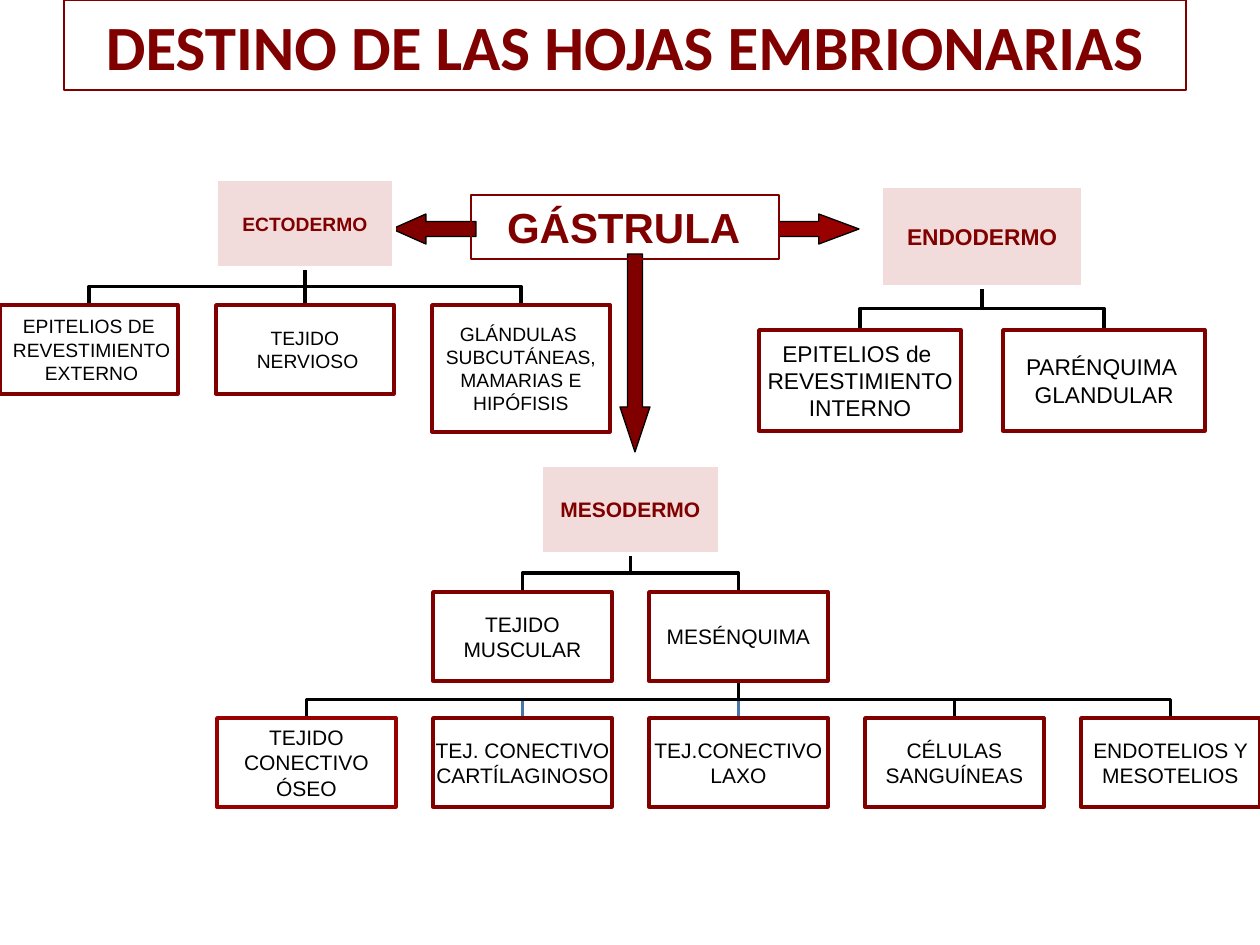
import pptx
import pptx.util
import pptx.oxml.ns
import lxml.etree
from pptx.dml.color import RGBColor
from pptx.enum.shapes import MSO_CONNECTOR, MSO_SHAPE
from pptx.enum.text import MSO_ANCHOR, PP_ALIGN

PX = 914400 / 126
MAROON = RGBColor(0x80, 0x00, 0x00)
RED = RGBColor(0x99, 0x00, 0x00)
PINK = RGBColor(0xF2, 0xDC, 0xDB)
BLUE = RGBColor(0x48, 0x75, 0xAC)
BLACK = RGBColor(0x00, 0x00, 0x00)
WHITE = RGBColor(0xFF, 0xFF, 0xFF)


def px(*values):
    return [pptx.util.Emu(round(v * PX)) for v in values]


def style(sp, fill, line, width):
    sp.shadow.inherit = False
    if fill is None:
        sp.fill.background()
    else:
        sp.fill.solid()
        sp.fill.fore_color.rgb = fill
    sp.line.color.rgb = line
    sp.line.width = pptx.util.Pt(width)


def write(tf, lines, size, color, bold=False, font="Arial", align=PP_ALIGN.CENTER):
    tf.word_wrap = True
    for i, line in enumerate(lines):
        p = tf.add_paragraph() if i else tf.paragraphs[0]
        p.alignment = align
        r = p.add_run()
        r.text = line
        r.font.name = font
        r.font.size = pptx.util.Pt(size)
        r.font.bold = bold
        r.font.color.rgb = color


def add_node(s, box, lines, size, root=False, line=MAROON):
    sp = s.shapes.add_shape(MSO_SHAPE.RECTANGLE, *px(*box))
    style(sp, PINK if root else WHITE, WHITE if root else line, 2)
    tf = sp.text_frame
    tf.margin_left = tf.margin_top = tf.margin_right = tf.margin_bottom = px(1)[0]
    tf.vertical_anchor = MSO_ANCHOR.MIDDLE
    write(tf, lines, size, MAROON if root else BLACK, root)
    return sp


def add_link(s, parent, child, color=BLACK):
    x1, x2 = (n.left + n.width // 2 for n in (parent, child))
    y1, y2 = parent.top + parent.height, child.top
    if abs(x1 - x2) < PX:
        sp = s.shapes.add_connector(MSO_CONNECTOR.STRAIGHT, x1, y1, x2, y2)
        sp.begin_connect(parent, 2)
        sp.end_connect(child, 0)
    else:
        mid = (y1 + y2) // 2
        fb = s.shapes.build_freeform(x1, y1)
        fb.add_line_segments([(x1, mid), (x2, mid), (x2, y2)], close=False)
        sp = fb.convert_to_shape()
        sp.fill.background()
    sp.line.color.rgb = color
    sp.line.width = pptx.util.Pt(2)
    if sp._element.spPr.find(pptx.oxml.ns.qn("a:effectLst")) is None:
        lxml.etree.SubElement(sp._element.spPr, pptx.oxml.ns.qn("a:effectLst"))
    s.shapes._spTree.insert(2, sp._element)


def add_row(s, box, pitch, labels, size):
    x, y, w, h = box
    return [add_node(s, (x + i * pitch, y, w, h), lines, size)
            for i, lines in enumerate(labels)]


def add_branch(s, box, node, pitch, root, labels, size):
    x, y, width = box
    w, h, step = node
    parent = add_node(s, (x + (width - w) / 2, y, w, h), [root], size, root=True)
    children = add_row(s, (x, y + step, w, h), pitch, labels, size)
    for child in children:
        add_link(s, parent, child)
    return children


def add_title(s, box):
    sp = s.shapes.title
    sp.left, sp.top, sp.width, sp.height = px(*box)
    style(sp, None, MAROON, 0.75)
    sp.text_frame.vertical_anchor = MSO_ANCHOR.MIDDLE
    write(sp.text_frame, ["DESTINO DE LAS HOJAS EMBRIONARIAS"], 36, MAROON, True, "Calibri")


def add_gastrula(s, box):
    x, y, w, h = box
    arrows = [
        (MSO_SHAPE.RIGHT_ARROW, (x + w, y + 19, 80, 30), 1.34, RED),
        (MSO_SHAPE.DOWN_ARROW, (x + 149, y + 59, 30, 198), 1.5, MAROON),
        (MSO_SHAPE.LEFT_ARROW, (x - 79, y + 19, 84, 30), 1.13, MAROON),
    ]
    for kind, place, head, color in arrows:
        sp = s.shapes.add_shape(kind, *px(*place))
        sp.adjustments[0] = 0.5
        sp.adjustments[1] = head
        style(sp, color, BLACK, 0.75)
    sp = s.shapes.add_textbox(*px(*box))
    style(sp, None, MAROON, 0.75)
    sp.text_frame.margin_left = px(36)[0]
    write(sp.text_frame, ["GÁSTRULA"], 24, MAROON, True, align=PP_ALIGN.LEFT)


def add_endoderm(s, box):
    add_branch(s, box, (202, 101, 144), 244, "ENDODERMO", [
        ["EPITELIOS de ", "REVESTIMIENTO", "INTERNO"],
        ["PARÉNQUIMA ", "GLANDULAR"],
    ], 13)


def add_ectoderm(s, box):
    children = add_branch(s, box, (178, 89, 126), 216, "ECTODERMO", [
        ["EPITELIOS DE", " REVESTIMIENTO", " EXTERNO"],
        ["TEJIDO", " NERVIOSO"],
        ["GLÁNDULAS ", "SUBCUTÁNEAS,", "MAMARIAS E HIPÓFISIS"],
    ], 11)
    children[-1].height = px(127)[0]


def add_mesoderm(s, box):
    x, y, width = box
    pitch = (width - 179) // 4
    muscle, mesenchyme = add_branch(
        s, (x + pitch, y, pitch + 179), (179, 89, 127), pitch, "MESODERMO",
        [["TEJIDO MUSCULAR"], ["MESÉNQUIMA"]], 12)
    bone, cartilage, loose, blood, lining = add_row(s, (x, y + 253, 179, 89), pitch, [
        ["TEJIDO CONECTIVO", "ÓSEO"],
        ["TEJ. CONECTIVO", "CARTÍLAGINOSO"],
        ["TEJ.CONECTIVO", "LAXO"],
        ["CÉLULAS", "SANGUÍNEAS"],
        ["ENDOTELIOS Y MESOTELIOS"],
    ], 12)
    bone.line.color.rgb = RED
    for child in (bone, blood, lining):
        add_link(s, mesenchyme, child)
    for child in (cartilage, loose):
        add_link(s, mesenchyme, child, BLUE)


def main():
    prs = pptx.Presentation()
    prs.slide_width, prs.slide_height = px(1260, 945)
    s = prs.slides.add_slide(prs.slide_layouts[5])
    add_title(s, (64, 0, 1122, 90))
    add_gastrula(s, (471, 195, 308, 64))
    add_endoderm(s, (759, 186, 446))
    add_mesoderm(s, (217, 465, 1043))
    add_ectoderm(s, (0, 179, 610))
    prs.save("out.pptx")


if __name__ == "__main__":
    main()
